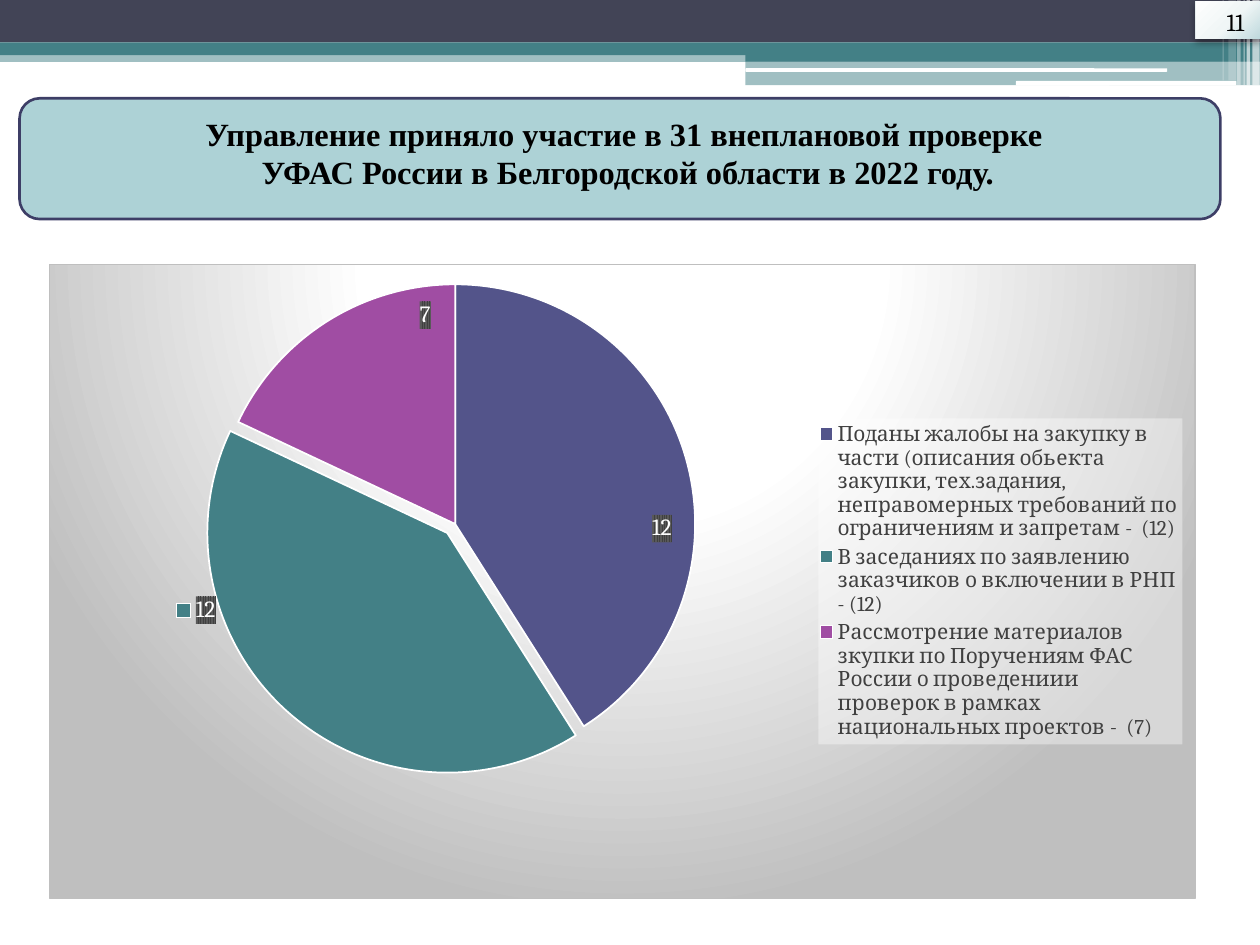
from lxml import etree
from pptx import Presentation
from pptx.chart.data import CategoryChartData
from pptx.dml.color import RGBColor
from pptx.enum.chart import XL_CHART_TYPE, XL_LABEL_POSITION, XL_LEGEND_POSITION
from pptx.enum.shapes import MSO_SHAPE
from pptx.enum.text import MSO_ANCHOR, PP_ALIGN
from pptx.oxml import parse_xml
from pptx.oxml.ns import nsdecls, qn
from pptx.util import Pt

NAVY, TEAL, WHITE, BLACK = "424456", "438086", "FFFFFF", "000000"


def rgb(value):
    return RGBColor.from_string(value)


def gradient(stops, left, top, right, bottom):
    """Circular gradient; the focus rectangle is in percent."""
    stop_xml = "".join(f'<a:gs pos="{pos * 1000}"><a:srgbClr val="{color}"/></a:gs>'
                       for pos, color in stops)
    return parse_xml(
        f'<a:gradFill {nsdecls("a")} rotWithShape="1"><a:gsLst>{stop_xml}</a:gsLst>'
        f'<a:path path="circle"><a:fillToRect l="{left * 1000}" t="{top * 1000}" '
        f'r="{right * 1000}" b="{bottom * 1000}"/></a:path></a:gradFill>')


def add_box(slide, box, fill, opacity=100, kind=MSO_SHAPE.RECTANGLE, line=None, width=0.75):
    shape = slide.shapes.add_shape(kind, *map(Pt, box))
    shape.shadow.inherit = False
    shape.fill.solid()
    shape.fill.fore_color.rgb = rgb(fill)
    if opacity < 100:
        color = shape._element.spPr.find(qn("a:solidFill"))[0]
        etree.SubElement(color, qn("a:alpha"), val=str(opacity * 1000))
    if line:
        shape.line.color.rgb = rgb(line)
        shape.line.width = Pt(width)
    else:
        shape.line.fill.background()
    return shape


def style_font(font, size, name, color, bold=False):
    font.size, font.name, font.bold = Pt(size), name, bold
    font.color.rgb = rgb(color)


def add_run(paragraph, text, size, name, color=BLACK, bold=False):
    run = paragraph.add_run()
    run.text = text
    style_font(run.font, size, name, color, bold)


def indent(paragraph, left, first=0):
    properties = paragraph._p.get_or_add_pPr()
    properties.set("marL", str(Pt(left)))
    properties.set("indent", str(Pt(first)))


def add_header(slide, width):
    # Full-width bands: top, height, colour, opacity
    for top, height, color, opacity in [(28.8, 6.6, TEAL, 50), (0, 24.3, NAVY, 100),
                                        (24.3, 7.2, TEAL, 100)]:
        add_box(slide, (0, top, width, height), color, opacity)
    # Step on the right
    step = 426
    add_box(slide, (step, 28, width - step, 7.2), TEAL)
    add_box(slide, (step, 35.2, width - step, 13.4), TEAL, 50)
    for box in [(step, 39, 241, 2), (580.5, 46.3, 126, 2.6)]:
        add_box(slide, box, WHITE, kind=MSO_SHAPE.ROUNDED_RECTANGLE)
    # Thin stripes at the edge: left, width, height, opacity
    for left, stripe, height, opacity in [
            (715.6, 4.2, 48.8, 65), (712.3, 2, 48.8, 65), (710.6, 0.7, 48.8, 60),
            (707, 2, 48.8, 40), (702, 4.3, 46, 20), (698.6, 0.7, 46, 30)]:
        add_box(slide, (left, 0, stripe, height), WHITE, opacity)


def add_title(slide, box, lines):
    title = add_box(slide, box, "ADD2D6", kind=MSO_SHAPE.ROUNDED_RECTANGLE,
                    line="3D3E66", width=1.5)
    frame = title.text_frame
    frame.word_wrap = True
    frame.vertical_anchor = MSO_ANCHOR.TOP
    frame.margin_top = Pt(5.4)
    for number, line in enumerate(lines):
        paragraph = frame.add_paragraph() if number else frame.paragraphs[0]
        paragraph.alignment = PP_ALIGN.CENTER
        indent(paragraph, 24.2, -20.2)
        add_run(paragraph, line, 18.5, "Times New Roman", bold=True)


def style_label(point, text, shift, with_key):
    """Custom label text on a dark striped ground, moved by a share of the chart."""
    label = point.data_label
    add_run(label.text_frame.paragraphs[0], text, 13.3, "Cambria", WHITE)
    label.position = XL_LABEL_POSITION.CENTER
    element = label._dLbl
    element.find(qn("c:showLegendKey")).set("val", str(int(with_key)))
    layout = parse_xml(
        f'<c:layout {nsdecls("c")}><c:manualLayout><c:x val="{shift[0]}"/>'
        f'<c:y val="{shift[1]}"/></c:manualLayout></c:layout>')
    element.find(qn("c:idx")).addnext(layout)
    ground = parse_xml(
        f'<c:spPr {nsdecls("c", "a")}><a:pattFill prst="narVert">'
        '<a:fgClr><a:srgbClr val="404040"/></a:fgClr>'
        '<a:bgClr><a:srgbClr val="595959"/></a:bgClr></a:pattFill></c:spPr>')
    element.find(qn("c:tx")).addnext(ground)


def manual_layout(x, y, width, height, inner=False):
    target = '<c:layoutTarget val="inner"/>' if inner else ""
    return parse_xml(
        f'<c:layout {nsdecls("c")}><c:manualLayout>{target}<c:xMode val="edge"/>'
        f'<c:yMode val="edge"/><c:x val="{x}"/><c:y val="{y}"/><c:w val="{width}"/>'
        f'<c:h val="{height}"/></c:manualLayout></c:layout>')


def replace_layout(parent, layout, after=None):
    old = parent.find(qn("c:layout"))
    if old is not None:
        parent.remove(old)
    if after is None:
        parent.insert(0, layout)
    else:
        parent.find(qn(after)).addnext(layout)


def add_checks_chart(slide, box, slices):
    data = CategoryChartData(number_format="General")
    data.categories = [reason for reason, *_ in slices]
    data.add_series("Series 1", [share for _, share, *_ in slices])
    chart = slide.shapes.add_chart(XL_CHART_TYPE.PIE, *map(Pt, box), data).chart
    chart.has_title = False
    style_font(chart.font, 10, "Cambria", BLACK)

    # Slices
    plot = chart.plots[0]
    plot.vary_by_categories = True
    pie = plot.series[0]
    for index, (_, _, color, count, shift, explosion) in enumerate(slices):
        point = pie.points[index]
        point.format.fill.solid()
        point.format.fill.fore_color.rgb = rgb(color)
        point.format.line.color.rgb = rgb(WHITE)
        point.format.line.width = Pt(1)
        pull = parse_xml(f'<c:explosion {nsdecls("c")} val="{explosion}"/>')
        pie._element.findall(qn("c:dPt"))[index].find(qn("c:spPr")).addprevious(pull)
        style_label(point, count, shift, with_key=explosion > 0)
    pie._element.find(qn("c:dPt")).addprevious(
        parse_xml(f'<c:explosion {nsdecls("c")} val="8"/>'))
    replace_layout(chart._chartSpace.chart.plotArea,
                   manual_layout(0.023, 0.001, 0.662, 0.817, inner=True))

    # Shared label settings, without leader lines
    labels = pie.data_labels
    labels.show_value = labels.show_percentage = True
    labels.number_format = r"\О\с\н\о\в\н\о\й"
    labels.number_format_is_linked = False
    labels.position = XL_LABEL_POSITION.CENTER
    style_font(labels.font, 13.3, "Cambria", WHITE, True)
    for leader in labels._element.findall(qn("c:showLeaderLines")):
        labels._element.remove(leader)
    labels._element.append(parse_xml(f'<c:showLeaderLines {nsdecls("c")} val="0"/>'))

    # Legend
    chart.has_legend = True
    legend = chart.legend
    legend.position = XL_LEGEND_POSITION.RIGHT
    legend.include_in_layout = False
    style_font(legend.font, 12, "Cambria", "404040")
    replace_layout(legend._element, manual_layout(0.671, 0.243, 0.318, 0.514), "c:legendPos")
    legend._element.find(qn("c:txPr")).addprevious(parse_xml(
        f'<c:spPr {nsdecls("c", "a")}><a:solidFill><a:srgbClr val="{WHITE}">'
        '<a:alpha val="39000"/></a:srgbClr></a:solidFill></c:spPr>'))

    # Background
    ground = parse_xml(
        f'<c:spPr {nsdecls("c", "a")}><a:ln w="{Pt(0.75)}"><a:solidFill>'
        '<a:srgbClr val="BFBFBF"/></a:solidFill></a:ln></c:spPr>')
    ground.insert(0, gradient([(0, WHITE), (39, WHITE), (100, "BFBFBF")], 50, -80, 50, 180))
    chart._chartSpace.chart.addnext(ground)


def add_page_number(slide, box, number):
    badge = add_box(slide, box, WHITE)
    properties = badge._element.spPr
    properties.replace(properties.find(qn("a:solidFill")), gradient(
        [(0, "FEFEFE"), (55, "F0F6F6"), (100, "BFD9DD")], -40, -90, 140, 190))
    properties.find(qn("a:effectLst")).append(parse_xml(
        f'<a:outerShdw {nsdecls("a")} blurRad="{Pt(4.1)}" dist="{Pt(2)}" dir="5400000">'
        f'<a:srgbClr val="{BLACK}"><a:alpha val="40000"/></a:srgbClr></a:outerShdw>'))
    frame = badge.text_frame
    frame.vertical_anchor = MSO_ANCHOR.MIDDLE
    frame.margin_top, frame.margin_bottom = Pt(3), Pt(1)
    paragraph = frame.paragraphs[0]
    paragraph.alignment = PP_ALIGN.CENTER
    indent(paragraph, 8.6)
    add_run(paragraph, number, 14, "Cambria")


def main():
    deck = Presentation()
    deck.slide_width, deck.slide_height = Pt(720), Pt(540)
    slide = deck.slides.add_slide(deck.slide_layouts[6])
    add_header(slide, 720)
    add_title(slide, (11.2, 56.2, 686.2, 69), [
        "Управление приняло участие в 31 внеплановой проверке",
        " УФАС России в Белгородской области в 2022 году."])
    # Reason, share, colour, count, label shift, explosion
    add_checks_chart(slide, (28.1, 150.8, 655.2, 362.9), [
        ("Поданы жалобы на закупку в части (описания обьекта закупки, тех.задания, "
         "неправомерных требований по ограничениям и запретам -  (12)",
         0.41, "53548A", "12", (0.08, 0.06), 0),
        ("В заседаниях по заявлению заказчиков о включении в РНП  - (12)",
         0.41, TEAL, "12", (-0.15, -0.02), 5),
        ("Рассмотрение материалов зкупки по Поручениям ФАС России о проведениии "
         "проверок в рамках национальных проектов -  (7)",
         0.18, "A04DA3", "7", (0.03, -0.17), 0)])
    add_page_number(slide, (683.3, 0.7, 36.7, 21.6), "11")
    deck.save("out.pptx")


if __name__ == "__main__":
    main()
